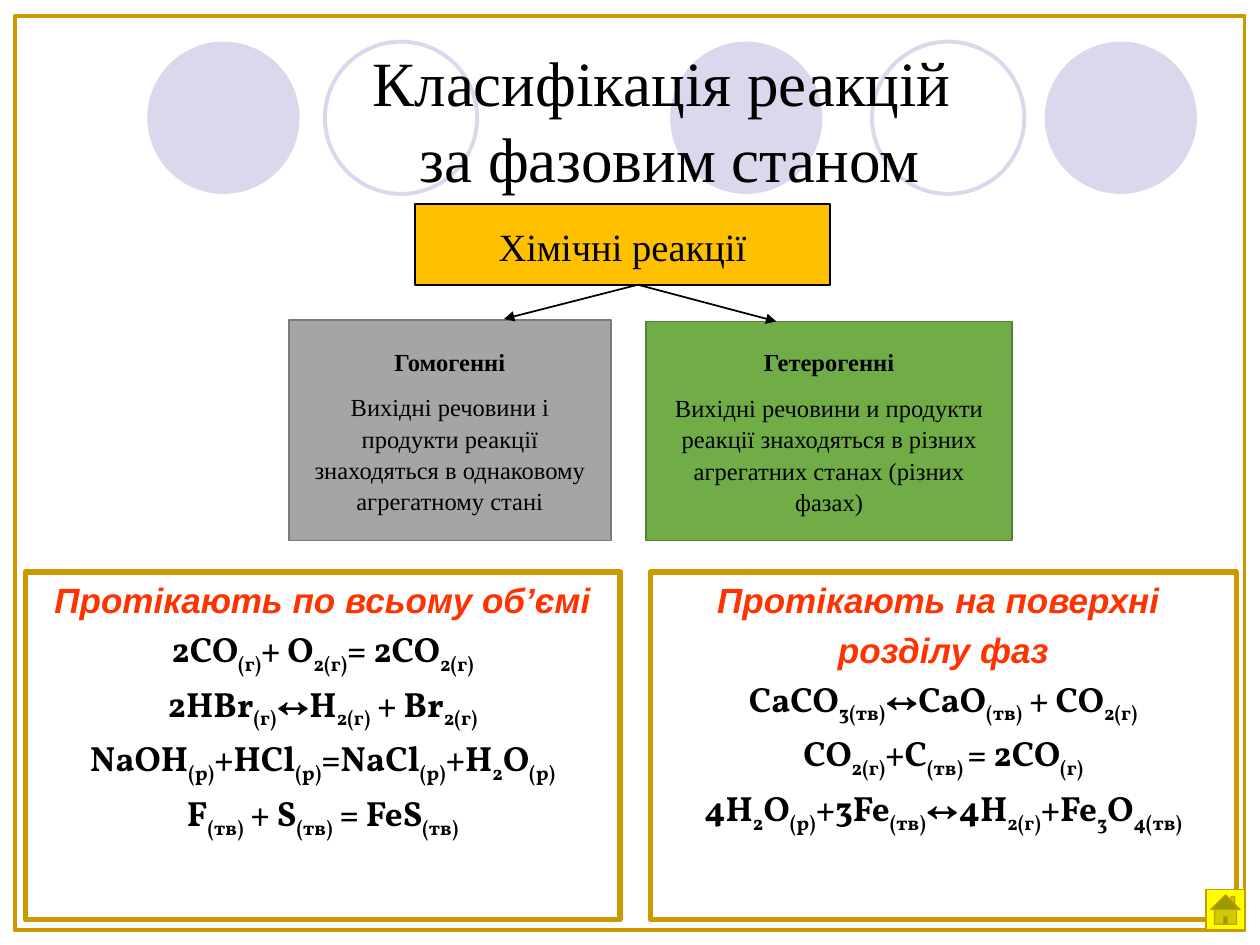
from lxml import etree
from pptx import Presentation
from pptx.dml.color import RGBColor
from pptx.enum.shapes import MSO_CONNECTOR, MSO_SHAPE
from pptx.enum.text import MSO_ANCHOR, MSO_AUTO_SIZE, PP_ALIGN
from pptx.oxml.ns import qn
from pptx.util import Cm, Pt

RECT, OVAL, HOME = MSO_SHAPE.RECTANGLE, MSO_SHAPE.OVAL, MSO_SHAPE.ACTION_BUTTON_HOME
STRAIGHT = MSO_CONNECTOR.STRAIGHT
CENTER, MIDDLE, TOP = PP_ALIGN.CENTER, MSO_ANCHOR.MIDDLE, MSO_ANCHOR.TOP
NO_FIT = MSO_AUTO_SIZE.NONE

BLACK = RGBColor(0x00, 0x00, 0x00)
LILAC = RGBColor(0xD9, 0xD8, 0xEC)
GOLD = RGBColor(0xCC, 0x99, 0x00)
YELLOW = RGBColor(0xFF, 0xFF, 0x00)
AMBER = RGBColor(0xFF, 0xC0, 0x00)
GRAY = RGBColor(0xA5, 0xA5, 0xA5)
DARK_GRAY = RGBColor(0x7A, 0x7A, 0x7A)
GREEN = RGBColor(0x70, 0xAD, 0x47)
DARK_GREEN = RGBColor(0x53, 0x81, 0x35)
RED = RGBColor(0xFF, 0x33, 0x00)

SERIF, SANS, FORMULA = "Times New Roman", "Arial", "Vollkorn"

HOMOGENEOUS = ["2СО|(г)|+ О|2(г)|= 2СО|2(г)",
               "2HBr|(г)|↔H|2(г)| + Br|2(г)",
               "NaOH|(р)|+HCl|(р)|=NaCl|(р)|+H|2|O|(р)",
               "F|(тв)| + S|(тв)| = FeS|(тв)"]
HETEROGENEOUS = ["CaCO|3(тв)|↔CaO|(тв)| + CO|2(г)",
                 "CO|2(г)|+С|(тв) |= 2СО|(г)",
                 "4H|2|O|(р)|+3Fe|(тв)|↔4H|2(г)|+Fe|3|O|4(тв)"]


def add_text(tf, text, size, font=SERIF, color=BLACK, bold=False, italic=False,
             before=0, after=0, spacing=1.0):
    """Add a centred paragraph; every second part between bars is a subscript."""
    p = tf.paragraphs[0]
    if p.runs:
        p = tf.add_paragraph()
    p.alignment = CENTER
    p.space_before, p.space_after, p.line_spacing = Pt(before), Pt(after), spacing
    for i, part in enumerate(text.split("|")):
        r = p.add_run()
        r.text = part
        r.font.name, r.font.size, r.font.color.rgb = font, Pt(size), color
        r.font.bold, r.font.italic = bold, italic
        if i % 2:
            r.font._element.set("baseline", "-25000")
    return p


def set_line(sp, color, width):
    sp.line.color.rgb = color
    sp.line.width = Pt(width)


def add_box(slide, kind, box, fill=None, line=None, width=1):
    sp = slide.shapes.add_shape(kind, *(Cm(v) for v in box))
    sp.shadow.inherit = False
    if fill is None:
        sp.fill.background()
    else:
        sp.fill.solid()
        sp.fill.fore_color.rgb = fill
    if line is None:
        sp.line.fill.background()
    else:
        set_line(sp, line, width)
    return sp


def place(slide, sp, box, anchor, wrap):
    """Move a placeholder to the box and in front of what is already drawn."""
    sp.left, sp.top, sp.width, sp.height = (Cm(v) for v in box)
    slide.shapes._spTree.append(sp._element)
    tf = sp.text_frame
    tf.auto_size, tf.vertical_anchor, tf.word_wrap = NO_FIT, anchor, wrap
    return tf


def add_circles(slide, box):
    left, top, size = box
    for offset, filled in ((0, True), (10.54, True), (18.09, True),
                           (3.58, False), (14.61, False)):
        circle = (left + offset, top, size, size)
        if filled:
            add_box(slide, OVAL, circle, fill=LILAC)
        else:
            add_box(slide, OVAL, circle, line=LILAC, width=2.25)


def add_title(slide, box):
    tf = place(slide, slide.shapes.title, box, MIDDLE, False)
    for text in ("Класифікація реакцій ", "за фазовим станом"):
        add_text(tf, text, 36)


def add_panel(slide, sp, box, headings, formulas):
    tf = place(slide, sp, box, TOP, True)
    set_line(sp, GOLD, 3)
    lines = [add_text(tf, text, 20, SANS, RED, True, True, before=4.5)
             for text in headings]
    lines += [add_text(tf, text, 20, FORMULA, bold=True, before=4)
              for text in formulas]
    for p in lines:
        pPr = p._p.get_or_add_pPr()
        pPr.set("marL", "0")
        pPr.set("indent", "0")
        etree.SubElement(pPr, qn("a:buNone"))


def add_arrow(slide, x1, y1, x2, y2):
    line = slide.shapes.add_connector(STRAIGHT, Cm(x1), Cm(y1), Cm(x2), Cm(y2))
    set_line(line, BLACK, 1)
    etree.SubElement(line.line._get_or_add_ln(), qn("a:tailEnd"), type="triangle")
    etree.SubElement(line._element.spPr, qn("a:effectLst"))


def add_node(slide, box, fill, line, size, text, heading=None):
    sp = add_box(slide, RECT, box, fill, line)
    tf = sp.text_frame
    tf.word_wrap, tf.vertical_anchor = True, MIDDLE
    if heading:
        add_text(tf, heading, size, bold=True, after=8, spacing=1.07)
    add_text(tf, text, size, after=8, spacing=1.07)


def add_tree(slide, box):
    x, y = box
    add_node(slide, (x + 2.54, y, 8.38, 1.63), AMBER, BLACK, 22, "Хімічні реакції")
    add_node(slide, (x, y + 2.34, 6.5, 4.45), GRAY, DARK_GRAY, 14,
             "Вихідні речовини і продукти реакції знаходяться в однаковому "
             "агрегатному стані", "Гомогенні")
    add_node(slide, (x + 7.21, y + 2.37, 7.37, 4.42), GREEN, DARK_GREEN, 14,
             "Вихідні речовини и продукти реакції знаходяться в різних "
             "агрегатних станах (різних фазах)", "Гетерогенні")
    for dx, dy in ((4.34, 2.32), (9.83, 2.37)):
        add_arrow(slide, x + 7.04, y + 1.63, x + dx, y + dy)


def main():
    prs = Presentation()
    prs.slide_width, prs.slide_height = Cm(25.4), Cm(19.05)
    slide = prs.slides.add_slide(prs.slide_layouts.get_by_name("Two Content"))
    left_body, right_body = slide.placeholders[1], slide.placeholders[2]

    add_circles(slide, (2.97, 0.84, 3.07))
    add_panel(slide, left_body, (0.51, 11.53, 11.99, 7.01),
              ["Протікають по всьому об’ємі"], HOMOGENEOUS)
    add_panel(slide, right_body, (13.11, 11.53, 11.81, 7.01),
              ["Протікають на поверхні ", "розділу фаз"], HETEROGENEOUS)
    add_title(slide, (6.1, 0.71, 14.81, 3.4))
    add_box(slide, RECT, (0.3, 0.33, 24.79, 18.42), line=GOLD, width=2.25)
    add_box(slide, HOME, (24.31, 17.93, 0.79, 0.81), YELLOW, GOLD, 0.75)
    add_tree(slide, (5.82, 4.11))
    prs.save("out.pptx")


if __name__ == "__main__":
    main()
